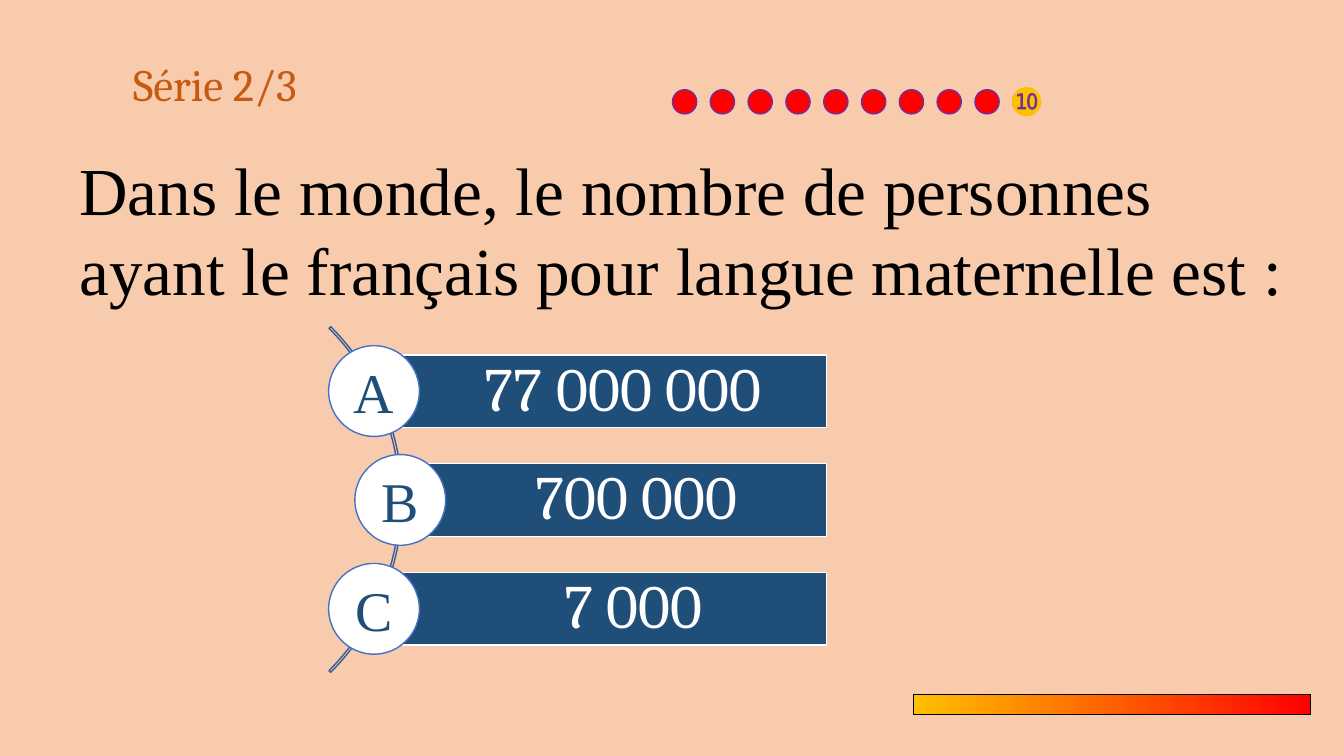
"""Build a quiz slide asking how many people speak French as a mother tongue."""
from dataclasses import dataclass

from pptx import Presentation
from pptx.dml.color import RGBColor
from pptx.enum import shapes, text
from pptx.util import Inches, Pt


@dataclass(frozen=True)
class Theme:
    background: str = "F8CBAD"
    heading: str = "C55A11"
    ink: str = "000000"
    white: str = "FFFFFF"
    navy: str = "1F4E79"
    ring: str = "4472C4"
    arc: str = "365B9D"
    red: str = "FF0000"
    amber: str = "FFC000"
    purple: str = "7030A0"
    serif: str = "Times New Roman"
    display: str = "Cambria"
    sans: str = "Arial"
    heading_size: int = 32
    question_size: int = 48
    answer_size: int = 44
    letter_size: int = 40
    counter_size: int = 28


@dataclass(frozen=True)
class Box:
    left: float
    top: float
    width: float
    height: float

    def lengths(self) -> tuple:
        return tuple(Inches(v) for v in (self.left, self.top, self.width, self.height))


@dataclass(frozen=True)
class Answer:
    letter: str
    label: str
    left: float
    inset: float = 0.57


THEME = Theme()
SHAPE = shapes.MSO_SHAPE
ALIGN = text.PP_ALIGN
ANCHOR = text.MSO_ANCHOR
ANSWERS = (
    Answer("A", "77 000 000", 3.26),
    Answer("B", "700 000", 3.52),
    Answer("C", "7 000", 3.26, 0.77),
)
FIRST_CIRCLE_TOP, ANSWER_PITCH, CIRCLE = 3.43, 1.08, 0.9
BAR_RIGHT, BAR_HEIGHT = 8.2, 0.72
DOT_COUNT, DOT_LEFT, DOT_TOP, DOT_PITCH, DOT = 10, 6.67, 0.89, 0.375, 0.24


def rgb(value: str) -> RGBColor:
    return RGBColor.from_string(value)


def add_shape(parent, kind, box: Box, fill: str | None, line: str, weight: float = 1):
    sp = parent.add_shape(kind, *box.lengths())
    sp.shadow.inherit = False
    if fill:
        sp.fill.solid()
        sp.fill.fore_color.rgb = rgb(fill)
    else:
        sp.fill.background()
    sp.line.color.rgb = rgb(line)
    sp.line.width = Pt(weight)
    return sp


def write(sp, words: str, font: str, size: int, color: str, align=ALIGN.LEFT,
          anchor=ANCHOR.TOP, wrap: bool = True, spacing: float = 1.0) -> None:
    tf = sp.text_frame
    tf.auto_size = text.MSO_AUTO_SIZE.NONE
    tf.word_wrap = wrap
    tf.vertical_anchor = anchor
    p = tf.paragraphs[0]
    p.text = words
    p.alignment = align
    p.line_spacing = spacing
    p.font.name = font
    p.font.size = Pt(size)
    p.font.color.rgb = rgb(color)


def add_progress(s) -> None:
    for i in range(DOT_COUNT):
        fill = THEME.purple if i == DOT_COUNT - 1 else THEME.red
        box = Box(DOT_LEFT + i * DOT_PITCH, DOT_TOP, DOT, DOT)
        add_shape(s.shapes, SHAPE.OVAL, box, fill, THEME.purple)
    counter = s.shapes.add_textbox(*Box(9.91, 0.72, 0.52, 0.57).lengths())
    write(counter, "❿", THEME.sans, THEME.counter_size, THEME.amber)


def add_timer(s) -> None:
    sp = add_shape(s.shapes, SHAPE.RECTANGLE, Box(9.06, 6.89, 3.94, 0.2), None, THEME.ink, 0.75)
    sp.fill.gradient()
    sp.fill.gradient_angle = 0
    for stop, color in zip(sp.fill.gradient_stops, (THEME.amber, THEME.red)):
        stop.color.rgb = rgb(color)


def add_answer(parent, answer: Answer, circle_top: float) -> None:
    center = answer.left + CIRCLE / 2
    bar_top = circle_top + (CIRCLE - BAR_HEIGHT) / 2
    box = Box(center, bar_top, BAR_RIGHT - center, BAR_HEIGHT)
    bar = add_shape(parent, SHAPE.RECTANGLE, box, THEME.navy, THEME.white)
    write(bar, answer.label, THEME.display, THEME.answer_size, THEME.white,
          ALIGN.CENTER, ANCHOR.MIDDLE, spacing=0.9)
    bar.text_frame.margin_left = Inches(answer.inset)
    bar.text_frame.margin_right = Inches(0.12)
    circle = add_shape(parent, SHAPE.OVAL, Box(answer.left, circle_top, CIRCLE, CIRCLE),
                       THEME.white, THEME.ring)
    write(circle, answer.letter, THEME.serif, THEME.letter_size, THEME.navy,
          ALIGN.CENTER, ANCHOR.MIDDLE, wrap=False)


def add_answers(s) -> None:
    group = s.shapes.add_group_shape().shapes
    arc = add_shape(group, SHAPE.BLOCK_ARC, Box(-0.86, 2.53, 4.85, 4.85), None, THEME.arc)
    for i, value in enumerate((189, 27, 0.005)):
        arc.adjustments[i] = value
    for i, answer in enumerate(ANSWERS):
        add_answer(group, answer, FIRST_CIRCLE_TOP + i * ANSWER_PITCH)


def main() -> None:
    prs = Presentation()
    prs.slide_width, prs.slide_height = Inches(13.33), Inches(7.5)
    s = prs.slides.add_slide(prs.slide_layouts[5])
    s.background.fill.solid()
    s.background.fill.fore_color.rgb = rgb(THEME.background)

    title = s.shapes.title
    title.left, title.top, title.width, title.height = Box(1.22, 0.59, 2.09, 0.54).lengths()
    write(title, "Série 2/3", THEME.display, THEME.heading_size, THEME.heading,
          anchor=ANCHOR.MIDDLE, spacing=0.9)
    add_progress(s)
    add_timer(s)
    add_answers(s)
    question = s.shapes.add_textbox(*Box(0.69, 1.42, 12.3, 1.72).lengths())
    write(question, "Dans le monde, le nombre de personnes ayant le français pour langue maternelle est :",
          THEME.serif, THEME.question_size, THEME.ink)
    prs.save("out.pptx")


if __name__ == "__main__":
    main()
